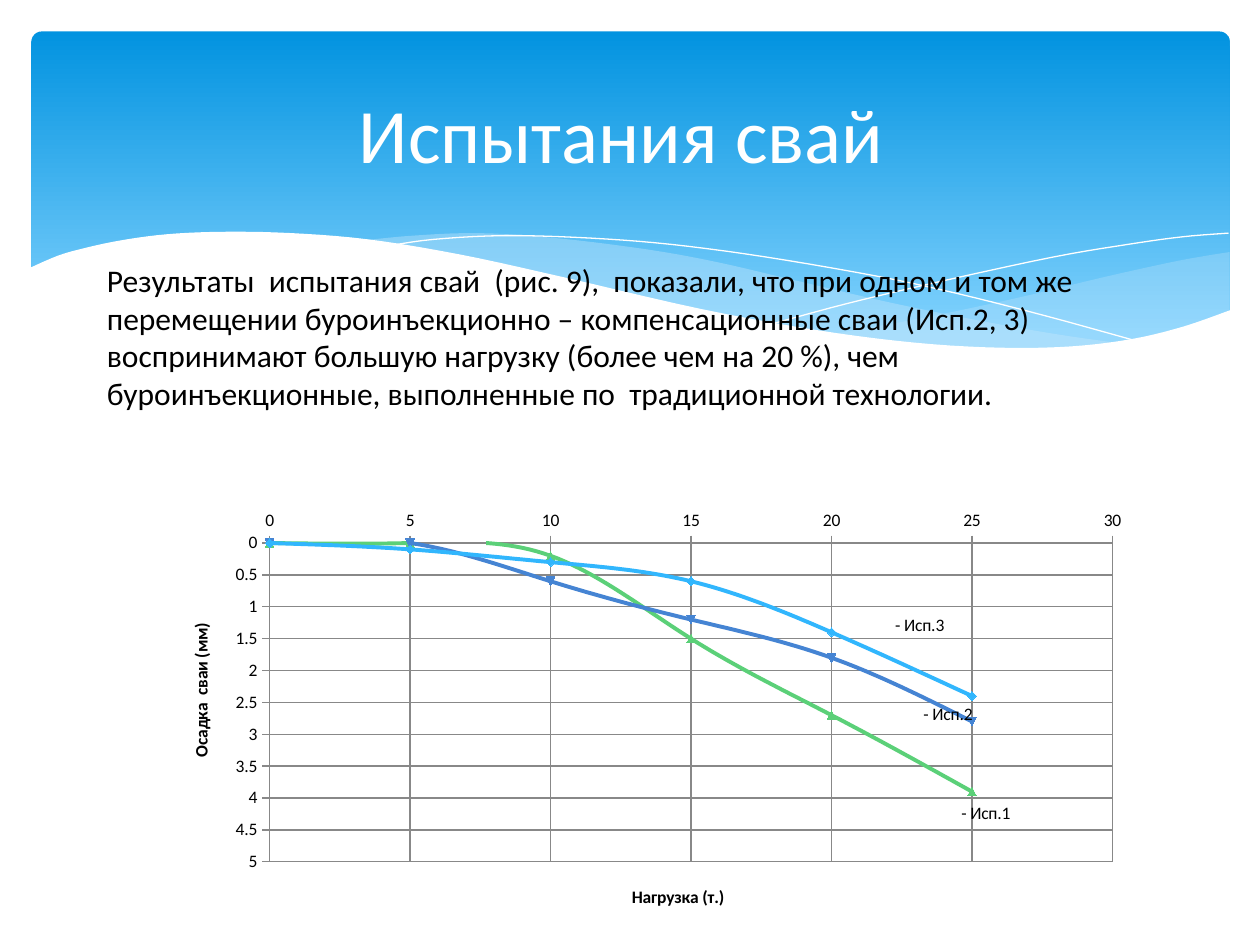
from dataclasses import dataclass

from lxml import etree
from pptx import Presentation
from pptx import util as u
from pptx.chart.data import XyChartData
from pptx.dml.color import RGBColor
from pptx.enum import chart as charts, shapes, text
from pptx.oxml.ns import qn

PX = 9144


@dataclass(frozen=True)
class Theme:
    """Colours and type sizes of the slide."""
    font: str = "Calibri"
    title_size: int = 44
    body_size: int = 18
    chart_size: int = 10
    white: str = "FFFFFF"
    ink: str = "000000"
    grid: str = "888888"
    sky_top: str = "0293E0"
    sky_bottom: str = "83D3FE"
    mist: str = "C6E7FC"
    series: tuple = ("31B6FD", "4584D3", "5BD078")


THEME = Theme()
LOADS = (0, 5, 10, 15, 20, 25)
SETTLEMENTS = (
    ("Series 1", (0, 0.1, 0.3, 0.6, 1.4, 2.4)),
    ("Series 2", (0, 0, 0.6, 1.2, 1.8, 2.8)),
    ("Series 3", (0, 0, 0.2, 1.5, 2.7, 3.9)),
)
POINT_LABELS = (
    (2, "- Исп.3", 266, 55),
    (3, "- Исп.2", 177, 60),
    (5, " - Исп.1", -19, 17),
)
BODY = (
    "Результаты  испытания свай  (рис. 9),  показали, что при одном и том же "
    "перемещении буроинъекционно – компенсационные сваи (Исп.2, 3) "
    "воспринимают большую нагрузку (более чем на 20 %), чем "
    "буроинъекционные, выполненные по  традиционной технологии."
)
RIGHT_WAVE = (
    ((976, 200), (935, 207), (876, 220), (805, 237), (729, 253), (661, 265)),
    ((661, 265), (705, 271), (757, 276), (814, 278), (863, 275), (913, 267), (949, 257), (976, 247)),
)
LONG_WAVE = (
    ((893, 273), (837, 265), (775, 254), (706, 240), (629, 222), (569, 208),
     (514, 198), (442, 189), (380, 185), (328, 187), (286, 191)),
    ((286, 191), (342, 199), (404, 211), (449, 222), (530, 240), (601, 255),
     (665, 266), (722, 274), (785, 278), (838, 278), (893, 273)),
)
HAIRLINES = (
    ((309, 195), (344, 190), (401, 187), (469, 189), (533, 194), (608, 204),
     (695, 219), (760, 233), (831, 251), (907, 272)),
    ((613, 257), (672, 241), (748, 223), (836, 204), (895, 194), (938, 188), (975, 185)),
)
PAPER_EDGE = (
    ((977, 246), (940, 259), (899, 269), (850, 275), (793, 276), (726, 272),
     (648, 262), (555, 245), (447, 220), (365, 202), (292, 190), (230, 185),
     (177, 184), (132, 186), (95, 191), (67, 197), (46, 203), (23, 213)),
    ((23, 329), (977, 329)),
)


def color(value):
    """Return an RGB colour for a hex string."""
    return RGBColor.from_string(value)


def scaled(box):
    """Turn a px box into EMU lengths."""
    return [length * PX for length in box]


def style_font(font, size, value, bold=False):
    """Apply the theme typeface with a size and colour."""
    font.name, font.size, font.bold = THEME.font, u.Pt(size), bold
    font.color.rgb = color(value)


def smooth(knots, steps=5):
    """Return a Catmull-Rom curve through the knots."""
    if len(knots) < 3:
        return list(knots)
    padded = [knots[0], *knots, knots[-1]]
    curve = [knots[0]]
    for a, b, c, d in zip(padded, padded[1:], padded[2:], padded[3:]):
        for step in range(1, steps + 1):
            t = step / steps
            curve.append(tuple(
                (2 * q + (r - p) * t + (2 * p - 5 * q + 4 * r - s) * t ** 2
                 + (3 * q - p - 3 * r + s) * t ** 3) / 2
                for p, q, r, s in zip(a, b, c, d)))
    return curve


def add_wave(slide, box, edges, fill=None, opacity=100):
    """Add a filled wave, or a white hairline when there is no fill."""
    points = [(x * PX, y * PX) for edge in edges for x, y in smooth(edge)]
    builder = slide.shapes.build_freeform(*points[0])
    builder.add_line_segments(points[1:], close=fill is not None)
    shape = builder.convert_to_shape(box[0] * PX, box[1] * PX)
    shape.shadow.inherit = False
    if fill is None:
        shape.fill.background()
        shape.line.color.rgb = color(THEME.white)
        shape.line.width = u.Pt(0)
        return
    shape.fill.solid()
    shape.fill.fore_color.rgb = color(fill)
    shape.line.fill.background()
    if opacity < 100:
        tone = shape.fill._xPr.find(".//" + qn("a:srgbClr"))
        etree.SubElement(tone, qn("a:alpha"), val=str(opacity * 1000))


def add_banner(slide, box):
    """Draw the gradient header with its waves."""
    left, top = box[:2]
    sky = slide.shapes.add_shape(
        shapes.MSO_SHAPE.ROUNDED_RECTANGLE, *scaled((left + 25, top + 25, 951, 270)))
    sky.adjustments[0] = 0.03
    sky.shadow.inherit = False
    sky.line.fill.background()
    sky.fill.gradient()
    sky.fill.gradient_angle = 270
    stops = zip(sky.fill.gradient_stops, (0, 0.9), (THEME.sky_top, THEME.sky_bottom))
    for stop, position, value in stops:
        stop.position = position
        stop.color.rgb = color(value)
    add_wave(slide, box, RIGHT_WAVE, THEME.mist, 29)
    add_wave(slide, box, LONG_WAVE, THEME.mist, 40)
    for hairline in HAIRLINES:
        add_wave(slide, box, (hairline,))
    add_wave(slide, box, PAPER_EDGE, THEME.white)


def place_title(slide, box):
    """Format the title placeholder and bring it above the banner."""
    title = slide.shapes.title
    title.left, title.top, title.width, title.height = scaled(box)
    slide.shapes._spTree.append(title._element)
    title.text_frame.text = "Испытания свай "
    title.text_frame.vertical_anchor = text.MSO_ANCHOR.MIDDLE
    paragraph = title.text_frame.paragraphs[0]
    paragraph.alignment = text.PP_ALIGN.CENTER
    style_font(paragraph.font, THEME.title_size, THEME.white)


def set_layout(element, index, box, place, **modes):
    """Place a chart element by px lengths within the chart box."""
    for old in element.findall(qn("c:layout")):
        element.remove(old)
    layout = etree.Element(qn("c:layout"))
    manual = etree.SubElement(layout, qn("c:manualLayout"))
    for name, mode in modes.items():
        etree.SubElement(manual, qn("c:" + name), val=mode)
    for name, length, whole in zip("xywh", place, box[2:] * 2):
        etree.SubElement(manual, qn("c:" + name), val=str(length / whole))
    element.insert(index, layout)


def format_axis(axis, box, title, place, maximum, step):
    """Set the scale, gridlines and placed title of an axis."""
    axis.minimum_scale, axis.maximum_scale, axis.major_unit = 0, maximum, step
    axis.major_tick_mark = charts.XL_TICK_MARK.OUTSIDE
    axis.has_major_gridlines = True
    for line in (axis.format.line, axis.major_gridlines.format.line):
        line.color.rgb = color(THEME.grid)
        line.width = u.Pt(0.75)
    axis.tick_labels.number_format = "General"
    axis.tick_labels.number_format_is_linked = False
    axis.axis_title.text_frame.text = title
    style_font(axis.axis_title.text_frame.paragraphs[0].font, THEME.chart_size, THEME.ink, True)
    set_layout(axis.axis_title._element, 1, box, place, xMode="edge", yMode="edge")


def label_points(series, box):
    """Add the placed curve names to the points of a series."""
    for index, name, *offset in POINT_LABELS:
        label = series.points[index].data_label
        label.position = charts.XL_LABEL_POSITION.RIGHT
        label.text_frame.text = name
        style_font(label.text_frame.paragraphs[0].font, THEME.chart_size, THEME.ink)
        set_layout(label._dLbl, 1, box, offset)
    labels = series._element.find(qn("c:dLbls"))
    for flag in ("c:showVal", "c:showLeaderLines"):
        for element in labels.findall(qn(flag)):
            element.set("val", "0")


def add_settlement_chart(slide, box):
    """Plot pile settlement against load."""
    data = XyChartData()
    for name, values in SETTLEMENTS:
        series = data.add_series(name)
        for load, value in zip(LOADS, values):
            series.add_data_point(load, value)
    chart = slide.shapes.add_chart(
        charts.XL_CHART_TYPE.XY_SCATTER_SMOOTH, *scaled(box), data).chart
    chart.has_legend = chart.has_title = False
    style_font(chart.font, THEME.chart_size, THEME.ink)
    chart.plots[0].vary_by_categories = False
    format_axis(chart.category_axis, box, "Нагрузка (т.)", (369, 301), 30, 5)
    format_axis(chart.value_axis, box, "Осадка  сваи (мм)", (18, 93), 5, 0.5)
    chart.value_axis.reverse_order = True
    plot_area = chart._chartSpace.find(".//" + qn("c:plotArea"))
    set_layout(plot_area, 0, box, (84, 32, 669, 253),
               layoutTarget="inner", xMode="edge", yMode="edge")
    for series, value in zip(chart.plots[0].series, THEME.series):
        series._element.find(qn("c:smooth")).set("val", "1")
        series.format.line.color.rgb = color(value)
        series.format.line.width = u.Pt(2.25)
        series.marker.style = charts.XL_MARKER_STYLE.AUTOMATIC
        series.marker.size = 5
        series.marker.format.fill.solid()
        series.marker.format.fill.fore_color.rgb = color(value)
        series.marker.format.line.color.rgb = color(value)
    label_points(series, box)


def add_body(slide, box):
    """Write the test findings."""
    frame = slide.shapes.add_textbox(*scaled(box)).text_frame
    frame.word_wrap = True
    frame.auto_size = text.MSO_AUTO_SIZE.SHAPE_TO_FIT_TEXT
    frame.text = BODY
    style_font(frame.paragraphs[0].font, THEME.body_size, THEME.ink)


def main():
    """Build and save the slide."""
    presentation = Presentation()
    presentation.slide_width, presentation.slide_height = scaled((1000, 750))
    slide = presentation.slides.add_slide(presentation.slide_layouts[5])
    add_banner(slide, (0, 0, 1000, 329))
    place_title(slide, (50, 37, 900, 137))
    add_settlement_chart(slide, (130, 399, 775, 342))
    add_body(slide, (75, 202, 819, 131))
    presentation.save("out.pptx")


if __name__ == "__main__":
    main()
